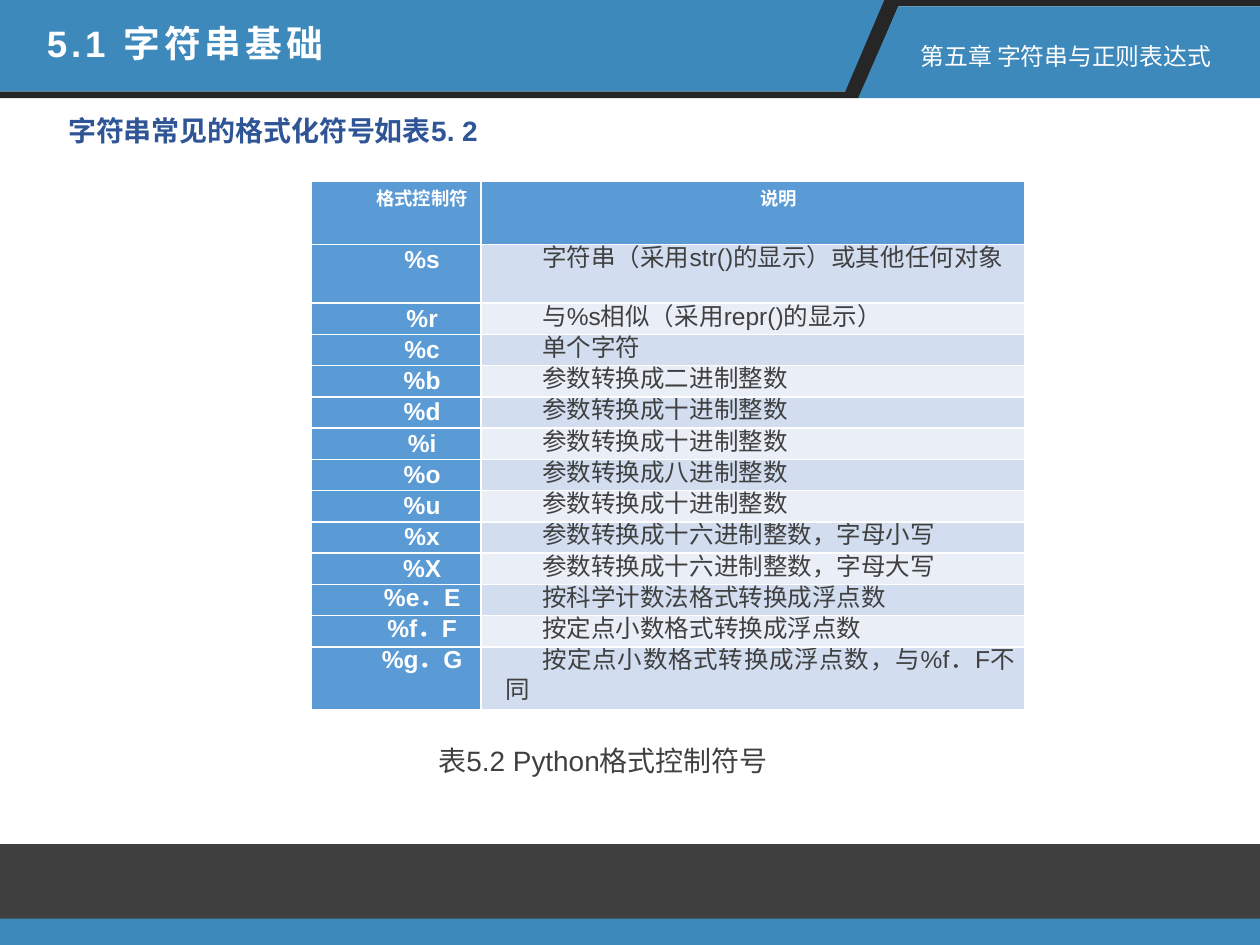
"""Build the slide on string format symbols."""
import dataclasses

import pptx
import pptx.dml.color
import pptx.enum.shapes
import pptx.enum.text
import pptx.oxml
import pptx.util

Cm = pptx.util.Cm
Pt = pptx.util.Pt
Align = pptx.enum.text.PP_ALIGN


@dataclasses.dataclass(frozen=True)
class Theme:
    font: str = "Arial"
    blue: str = "3D89BC"
    black: str = "262626"
    dark: str = "404040"
    navy: str = "2F5597"
    white: str = "FFFFFF"
    head: str = "5B9BD5"
    bands: tuple = ("D2DEEF", "EAEFF7")
    title: float = 21
    body: float = 16
    label: float = 13.6
    cell: float = 14
    small: float = 10.5


class Deck:
    """Hold the style and the current slide."""

    def __init__(self, theme):
        self.theme = theme
        self.file = pptx.Presentation()
        self.file.slide_width, self.file.slide_height = Cm(25.4), Cm(19.05)
        self.slide = self.file.slides.add_slide(self.file.slide_layouts[1])

    def paint(self, fill, color):
        fill.solid()
        fill.fore_color.rgb = pptx.dml.color.RGBColor.from_string(color)

    def plain(self, shape, color):
        self.paint(shape.fill, color)
        shape.line.fill.background()
        shape.shadow.inherit = False

    def outline(self, points, color):
        (x, y), *rest = [(Cm(x), Cm(y)) for x, y in points]
        pen = self.slide.shapes.build_freeform(x, y)
        pen.add_line_segments(rest, close=True)
        self.plain(pen.convert_to_shape(), color)

    def bar(self, top, height, color):
        kind = pptx.enum.shapes.MSO_SHAPE.RECTANGLE
        box = (Cm(0), Cm(top), self.file.slide_width, Cm(height))
        self.plain(self.slide.shapes.add_shape(kind, *box), color)

    def style(self, frame, text, size, color, bold=False, align=Align.LEFT,
              left=0, first=0):
        frame.text = text
        frame.word_wrap = True
        para = frame.paragraphs[0]
        para.alignment = align
        props = para._p.get_or_add_pPr()
        props.set("marL", str(Cm(left)))
        props.set("indent", str(Cm(first)))
        for run in para.runs:
            run.font.name, run.font.size, run.font.bold = self.theme.font, Pt(size), bold
            self.paint(run.font.fill, color)
        return para

    def place(self, shape, box, *args, **more):
        shape.left, shape.top, shape.width, shape.height = map(Cm, box)
        para = self.style(shape.text_frame, *args, **more)
        shape.text_frame.auto_size = pptx.enum.text.MSO_AUTO_SIZE.NONE
        shape.text_frame.vertical_anchor = pptx.enum.text.MSO_ANCHOR.TOP
        shape.element.getparent().append(shape.element)
        return para

    def title(self, text, box):
        para = self.place(self.slide.shapes.title, box, text,
                          self.theme.title, self.theme.white, bold=True)
        for run in para.runs:
            run._r.get_or_add_rPr().set("spc", "220")

    def body(self, text, box):
        para = self.place(self.slide.placeholders[1], box, text,
                          self.theme.body, self.theme.navy, bold=True)
        para.line_spacing, para.space_before = 0.9, Pt(10)
        props = para._p.get_or_add_pPr()
        props.append(pptx.oxml.parse_xml(
            '<a:buNone xmlns:a="http://schemas.openxmlformats.org/drawingml/2006/main"/>'))

    def text(self, text, box, size, color, **more):
        shape = self.slide.shapes.add_textbox(*map(Cm, box))
        self.place(shape, box, text, size, color, **more)

    def table(self, rows, box, widths, heights):
        look = self.theme
        grid = self.slide.shapes.add_table(len(rows), len(widths), *map(Cm, box)).table
        for col, width in zip(grid.columns, widths):
            col.width = Cm(width)
        for i, (row, height) in enumerate(zip(rows, heights)):
            grid.rows[i].height = Cm(height)
            for j, text in enumerate(row):
                cell = grid.cell(i, j)
                cell.margin_left = cell.margin_right = Cm(0.18)
                cell.margin_top = cell.margin_bottom = 0
                head = i == 0 or j == 0
                self.paint(cell.fill, look.head if head else look.bands[(i - 1) % 2])
                para = self.style(
                    cell.text_frame, text, look.cell if i else look.small,
                    look.white if head else look.dark, bold=head,
                    align=Align.CENTER if head else Align.JUSTIFY,
                    left=0.31, first=0.74)
                para.line_spacing = Pt(16.7)


ROWS = [
    ("格式控制符", "说明"),
    ("%s", "字符串（采用str()的显示）或其他任何对象"),
    ("%r", "与%s相似（采用repr()的显示）"),
    ("%c", "单个字符"),
    ("%b", "参数转换成二进制整数"),
    ("%d", "参数转换成十进制整数"),
    ("%i", "参数转换成十进制整数"),
    ("%o", "参数转换成八进制整数"),
    ("%u", "参数转换成十进制整数"),
    ("%x", "参数转换成十六进制整数，字母小写"),
    ("%X", "参数转换成十六进制整数，字母大写"),
    ("%e．E", "按科学计数法格式转换成浮点数"),
    ("%f．F", "按定点小数格式转换成浮点数"),
    ("%g．G", "按定点小数格式转换成浮点数，与%f．F不同"),
]


def main():
    look = Theme()
    deck = Deck(look)
    deck.outline([(0, 0), (17.9, 0), (17.12, 1.85), (0, 1.85)], look.blue)
    deck.outline([(17.83, 0), (25.4, 0), (25.4, 0.13), (18.11, 0.13), (17.32, 1.98),
                  (0, 1.98), (0, 1.85), (17.04, 1.85)], look.black)
    deck.outline([(18.11, 0.13), (25.4, 0.13), (25.4, 1.98), (17.3, 1.98)], look.blue)
    deck.bar(17.02, 1.52, look.dark)
    deck.bar(18.52, 0.53, look.blue)
    deck.body("字符串常见的格式化符号如表5. 2", (1.12, 2.24, 19.71, 1.52))
    deck.text("第五章 字符串与正则表达式", (18.31, 0.71, 7.09, 0.84), look.label, look.white)
    heights = [1.27, 0.84] + [0.63] * (len(ROWS) - 3) + [1.27]
    deck.table(ROWS, (6.27, 3.66, 14.38, 10.34), (3.43, 10.95), heights)
    deck.text("表5.2 Python格式控制符号", (7.85, 14.86, 10.29, 1.63),
              look.body, look.dark, first=0.74)
    deck.title("5.1 字符串基础", (0.69, 0.3, 9.93, 1.14))
    deck.file.save("out.pptx")


if __name__ == "__main__":
    main()
